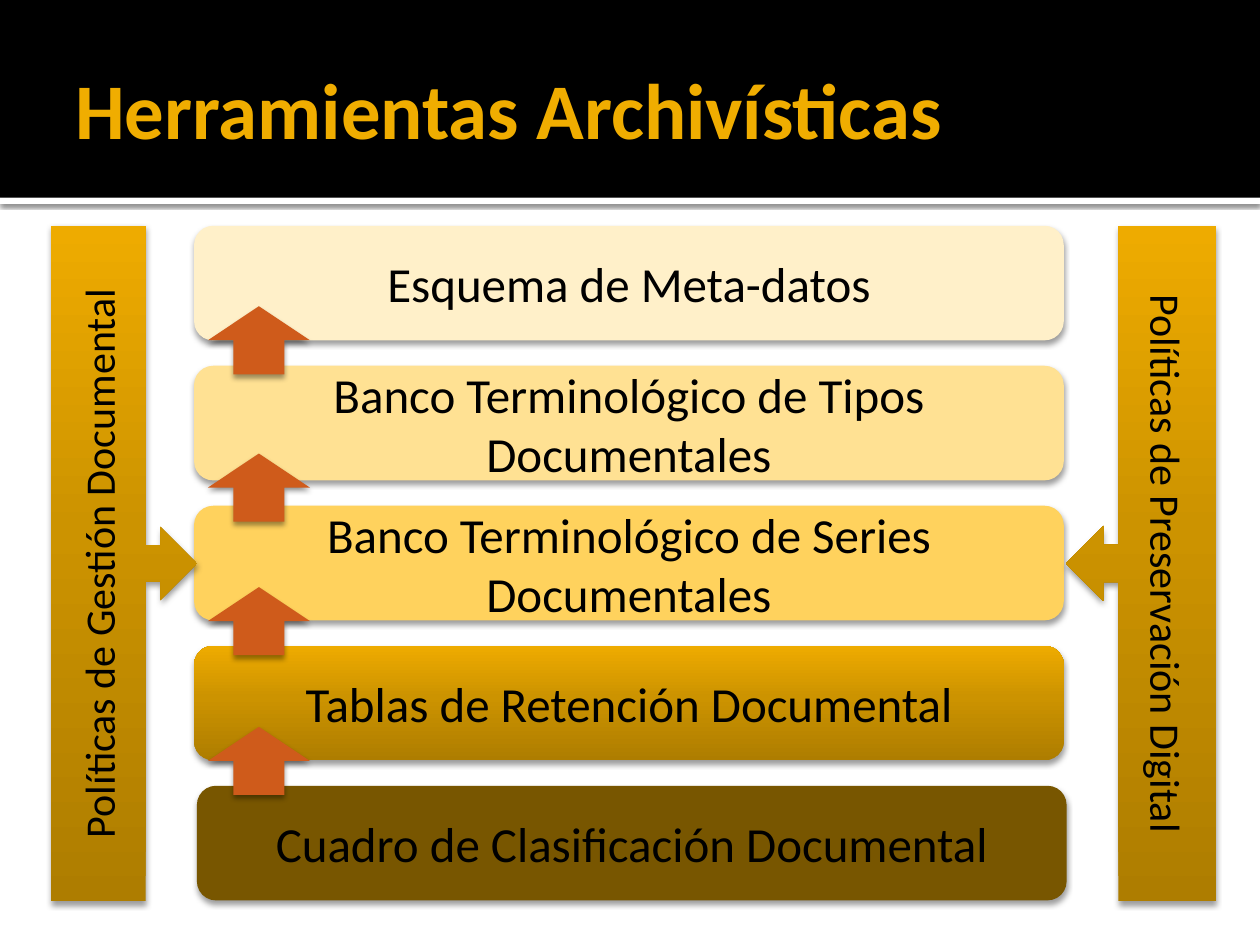
import copy

import pptx
import pptx.dml.color
import pptx.enum.shapes
import pptx.enum.text
import pptx.oxml
import pptx.oxml.ns
import pptx.util

Pt = pptx.util.Pt
SHAPE = pptx.enum.shapes.MSO_SHAPE
ALIGN = pptx.enum.text.PP_ALIGN
MIDDLE = pptx.enum.text.MSO_ANCHOR.MIDDLE

COLOURS = {
    "black": "000000",
    "white": "FFFFFF",
    "gold": "F0AD00",
    "cream": "FFF0C9",
    "pale": "FFE193",
    "yellow": "FFD25D",
    "brown": "785600",
    "orange": "CF5B1B",
}
GOLD_STOPS = [(0, "AE7D00"), (0.55, "CC9300"), (1, "EEAB00")]
SOFT_SHADOW = (3.1, 2, 38)  # blur, distance, opacity in percent


def add_block(kind, left, top, width, height, fill, shadow=SOFT_SHADOW):
    """Add an unlined shape; the fill "gradient" runs from dark to light gold, upwards."""
    block = page.shapes.add_shape(kind, Pt(left), Pt(top), Pt(width), Pt(height))
    block.line.fill.background()
    if fill == "gradient":
        block.fill.gradient()
        block.fill.gradient_angle = 90
        stop_list = block._element.spPr.find(".//" + pptx.oxml.ns.qn("a:gsLst"))
        stop_list.append(copy.deepcopy(stop_list[-1]))
        for stop, (position, colour) in zip(block.fill.gradient_stops, GOLD_STOPS):
            stop.position = position
            stop.color.rgb = pptx.dml.color.RGBColor.from_string(colour)
    else:
        block.fill.solid()
        block.fill.fore_color.rgb = pptx.dml.color.RGBColor.from_string(COLOURS[fill])
    block.shadow.inherit = False
    if shadow:
        blur, distance, opacity = shadow
        effects = block._element.spPr.find(pptx.oxml.ns.qn("a:effectLst"))
        effects.append(pptx.oxml.parse_xml(
            f'<a:outerShdw {pptx.oxml.ns.nsdecls("a")} blurRad="{Pt(blur)}" '
            f'dist="{Pt(distance)}" dir="5400000" rotWithShape="0">'
            f'<a:srgbClr val="{COLOURS["black"]}"><a:alpha val="{opacity * 1000}"/>'
            "</a:srgbClr></a:outerShdw>"))
    return block


def write_text(box, text, size, colour="black", align=ALIGN.CENTER, bold=False):
    frame = box.text_frame
    frame.word_wrap = True
    frame.vertical_anchor = MIDDLE
    para = frame.paragraphs[0]
    para.alignment = align
    span = para.add_run()
    span.text = text
    span.font.name = "Calibri"
    span.font.size = Pt(size)
    span.font.bold = bold
    span.font.color.rgb = pptx.dml.color.RGBColor.from_string(COLOURS[colour])


deck = pptx.Presentation()
deck.slide_width = Pt(720)
deck.slide_height = Pt(540)
page = deck.slides.add_slide(deck.slide_layouts[6])

# Header band and title
add_block(SHAPE.RECTANGLE, 0, 113, 720, 3.6, "white", (2.5, 0.8, 60))
add_block(SHAPE.RECTANGLE, 0, 0, 720, 113, "black", None)
title = page.shapes.add_textbox(Pt(36), Pt(12.2), Pt(648), Pt(98.6))
title.text_frame.margin_right = Pt(3.6)
write_text(title, "Herramientas Archivísticas", 45, "gold", ALIGN.LEFT, True)

# Stack of tools, from top to bottom
STACK_TOP = 129
STACK_STEP = 80
tools = [
    ("Esquema de Meta-datos", "cream", 110.9),
    ("Banco Terminológico de Tipos Documentales", "pale", 110.9),
    ("Banco Terminológico de Series Documentales", "yellow", 110.9),
    ("Tablas de Retención Documental", "gradient", 110.9),
    ("Cuadro de Clasificación Documental", "brown", 112.5),
]
for row, (name, fill, left) in enumerate(tools):
    tool = add_block(SHAPE.ROUNDED_RECTANGLE, left, STACK_TOP + row * STACK_STEP,
                     497, 65.5, fill)
    write_text(tool, name, 28)

# Arrows leading from each tool to the one above
for top in (415.4, 335.5, 259.2, 175):
    add_block(SHAPE.UP_ARROW, 118.8, top, 58.3, 38.9, "orange")

# Policies pointing at the stack from both sides
policies = [
    (SHAPE.RIGHT_ARROW_CALLOUT, 29, 83.5, "vert270", "Políticas de Gestión Documental"),
    (SHAPE.LEFT_ARROW_CALLOUT, 609.1, 85.7, "vert", "Políticas de Preservación Digital"),
]
for kind, left, width, direction, name in policies:
    policy = add_block(kind, left, STACK_TOP, width, 386, "gradient")
    policy.text_frame._txBody.bodyPr.set("vert", direction)
    write_text(policy, name, 24)

deck.save("out.pptx")
